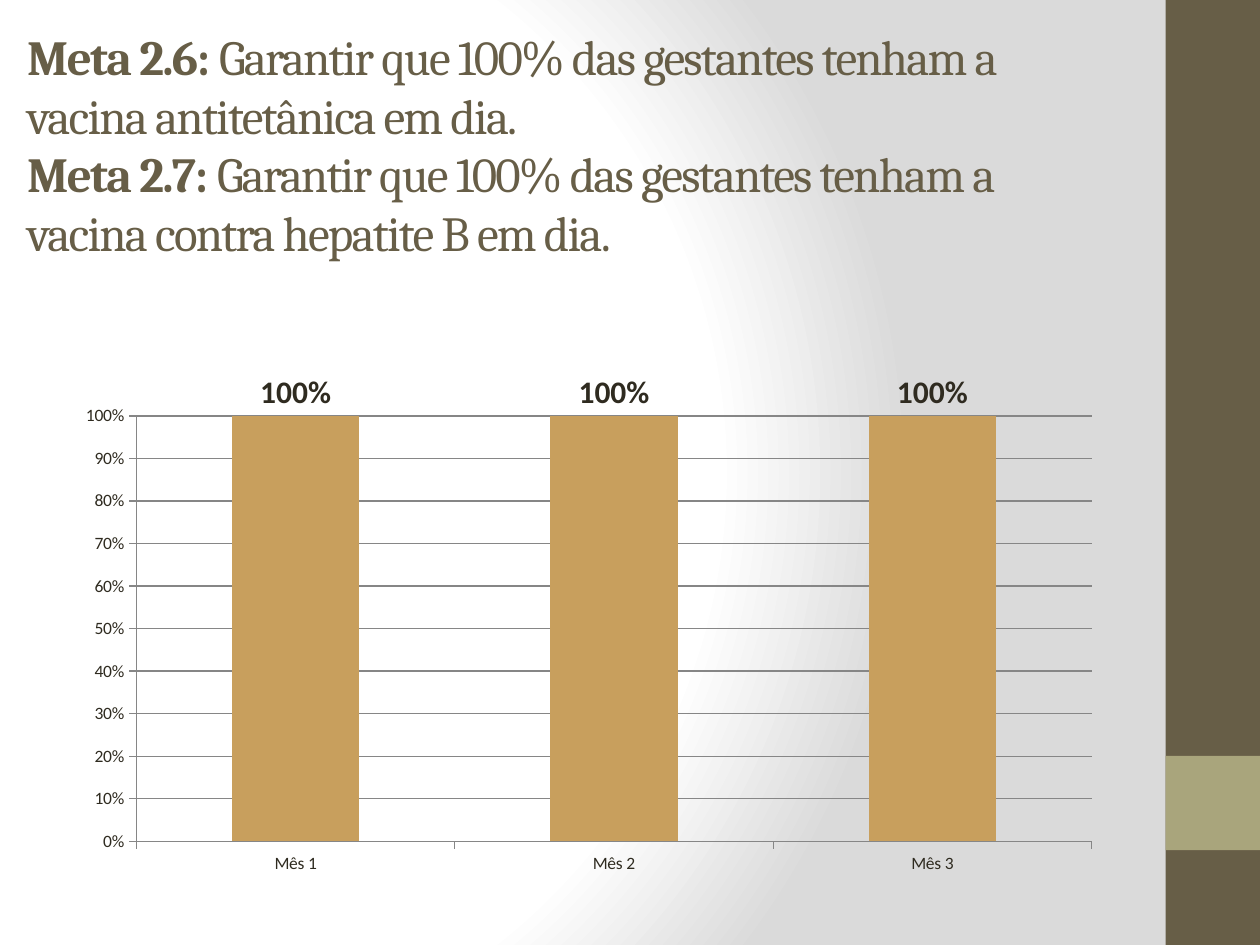
from lxml import etree
from pptx import Presentation
from pptx import util as u
from pptx.chart.data import CategoryChartData
from pptx.dml.color import RGBColor
from pptx.enum import chart as charts, shapes, text
from pptx.oxml import parse_xml
from pptx.oxml.ns import nsdecls, qn

OLIVE, SAGE, TAN, INK, GREY = "675E47", "A9A57C", "C89F5D", "2F2B20", "868686"

GOALS = [
    ("Meta 2.6: ", "Garantir que 100% das gestantes tenham a vacina antitetânica em dia."),
    ("Meta 2.7: ", "Garantir que 100% das gestantes tenham a vacina contra hepatite B em dia."),
]


def rgb(value):
    return RGBColor.from_string(value)


def set_all(target, values):
    for name, value in values.items():
        setattr(target, name, value)


def style_font(font, color, **values):
    set_all(font, values)
    font.color.rgb = rgb(color)


def add_background(slide):
    """Radial gradient from white to grey."""
    stops = "".join(
        f'<a:gs pos="{place * 1000}"><a:srgbClr val="{color}"/></a:gs>'
        for place, color in [(0, "FFFFFF"), (75, "FFFFFF"), (100, "DADADA")])
    background = parse_xml(
        f'<p:bg {nsdecls("p", "a")}><p:bgPr><a:gradFill rotWithShape="1">'
        f'<a:gsLst>{stops}</a:gsLst><a:path path="circle">'
        '<a:fillToRect l="20000" t="50000" r="100000" b="50000"/></a:path>'
        '</a:gradFill><a:effectLst/></p:bgPr></p:bg>')
    slide.element.cSld.insert(0, background)


def add_sidebar(slide, left, top, width, height):
    """Dark band with a light square near its foot."""
    for offset, size, color in [(0, height, OLIVE), (height * 0.8, width, SAGE)]:
        band = slide.shapes.add_shape(
            shapes.MSO_SHAPE.RECTANGLE,
            u.Cm(left), u.Cm(top + offset), u.Cm(width), u.Cm(size))
        band.shadow.inherit = False
        band.fill.solid()
        band.fill.fore_color.rgb = rgb(color)
        band.line.fill.background()


def add_goals(slide, left, top, width, height):
    """One paragraph per goal, led by its bold number."""
    box = slide.shapes.add_textbox(u.Cm(left), u.Cm(top), u.Cm(width), u.Cm(height))
    frame = box.text_frame
    set_all(frame, {"word_wrap": True, "margin_top": 0, "margin_bottom": 0,
                    "vertical_anchor": text.MSO_ANCHOR.TOP})
    for index, goal in enumerate(GOALS):
        para = frame.add_paragraph() if index else frame.paragraphs[0]
        for words, bold in zip(goal, (True, False)):
            span = para.add_run()
            span.text = words
            style_font(span.font, OLIVE, name="Cambria", size=u.Pt(28), bold=bold)
            span.font._element.set("spc", "-100")


def add_coverage_chart(slide, left, top, width, height):
    """Monthly coverage as columns."""
    data = CategoryChartData(number_format="0%")
    data.categories = ["Mês 1", "Mês 2", "Mês 3"]
    data.add_series("Series 1", [1, 1, 1])
    chart = slide.shapes.add_chart(
        charts.XL_CHART_TYPE.COLUMN_CLUSTERED,
        u.Cm(left), u.Cm(top), u.Cm(width), u.Cm(height), data).chart
    set_all(chart, {"has_title": False, "has_legend": False})
    style_font(chart.font, INK, name="Calibri", size=u.Pt(10))

    # Axes and gridlines
    values = chart.value_axis
    set_all(values, {"minimum_scale": 0, "maximum_scale": 1, "major_unit": 0.1,
                     "has_major_gridlines": True})
    set_all(values.tick_labels, {"number_format": "0%", "number_format_is_linked": False})
    for part in (values, values.major_gridlines, chart.category_axis):
        part.format.line.color.rgb = rgb(GREY)
        part.format.line.width = u.Pt(0.75)
    for axis in (values, chart.category_axis):
        axis.major_tick_mark = charts.XL_TICK_MARK.OUTSIDE

    # Columns and their labels
    plot = chart.plots[0]
    set_all(plot, {"gap_width": 150, "vary_by_categories": False})
    series = plot.series[0]
    series.format.fill.solid()
    series.format.fill.fore_color.rgb = rgb(TAN)
    labels = series.data_labels
    set_all(labels, {"show_value": True, "number_format": "0%",
                     "number_format_is_linked": False,
                     "position": charts.XL_LABEL_POSITION.OUTSIDE_END})
    style_font(labels.font, INK, name="Calibri", size=u.Pt(18), bold=True)

    # Fixed inner plot area, as shares of the chart
    area = chart._chartSpace.chart.plotArea
    for old in area.findall(qn("c:layout")):
        area.remove(old)
    layout = etree.Element(qn("c:layout"))
    manual = etree.SubElement(layout, qn("c:manualLayout"))
    for tag, value in [("layoutTarget", "inner"), ("xMode", "edge"), ("yMode", "edge"),
                       ("x", "0.07"), ("y", "0.08"), ("w", "0.91"), ("h", "0.84")]:
        etree.SubElement(manual, qn(f"c:{tag}")).set("val", value)
    area.insert(0, layout)


def main():
    deck = Presentation()
    set_all(deck, {"slide_width": u.Cm(25.4), "slide_height": u.Cm(19.05)})
    slide = deck.slides.add_slide(deck.slide_layouts[6])
    add_background(slide)
    add_sidebar(slide, 23.5, 0, 1.9, 19.05)
    add_goals(slide, 0.3, 0.53, 22.15, 5.8)
    add_coverage_chart(slide, 1.27, 7.52, 21.16, 10.26)
    deck.save("out.pptx")


if __name__ == "__main__":
    main()
